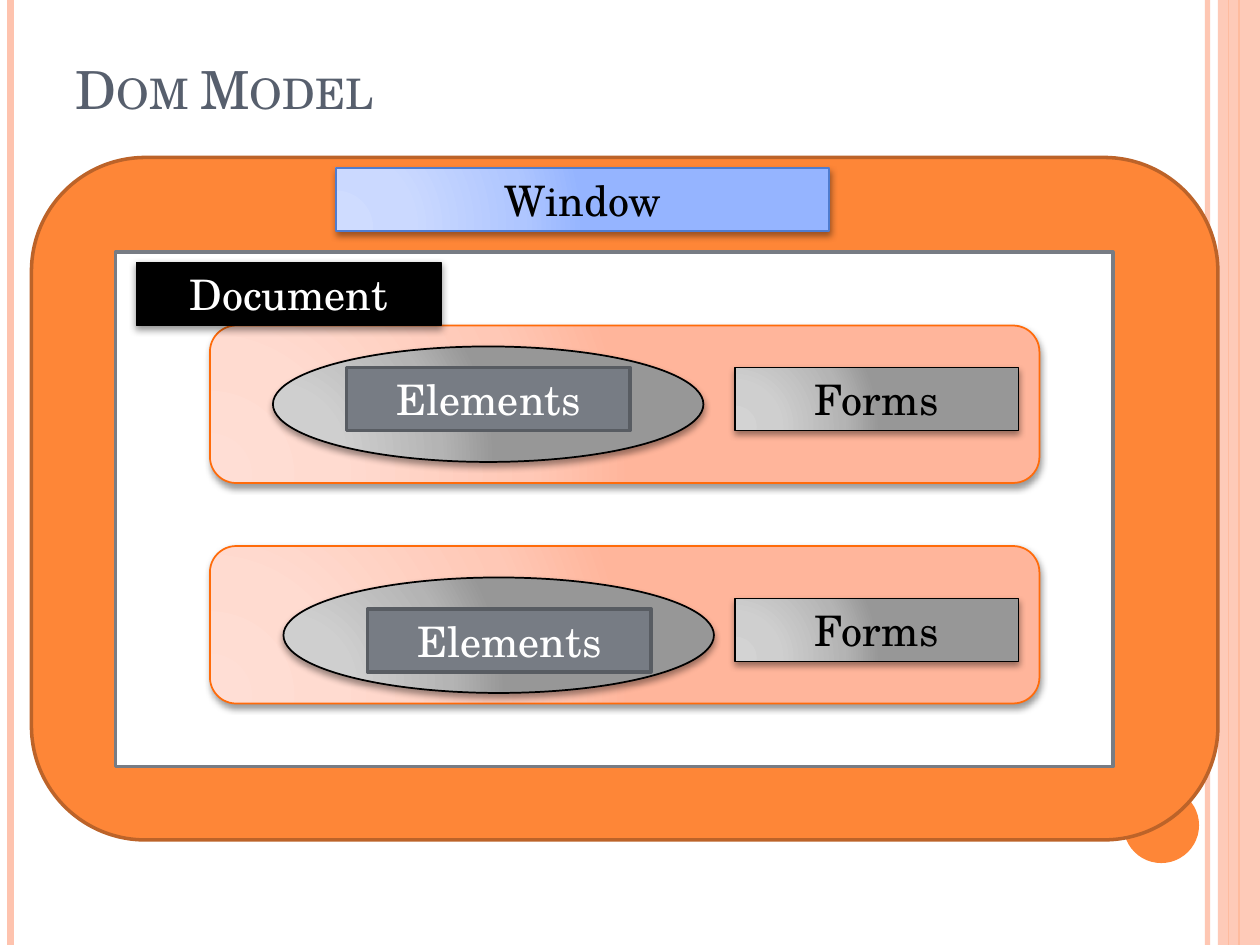
"""Build a slide that shows the DOM model as nested boxes."""
from dataclasses import dataclass
from typing import Optional

from lxml.etree import SubElement as Sub
from pptx import Presentation
from pptx.dml.color import RGBColor
from pptx.enum.shapes import MSO_CONNECTOR as Conn, MSO_SHAPE as Kind
from pptx.enum.text import MSO_ANCHOR as Anchor, MSO_AUTO_SIZE as Fit, PP_ALIGN as Align
from pptx.oxml.ns import qn
from pptx.util import Pt

FONT = "TeX Gyre Schola"
STOPS = (0, 30, 75, 100)
FOCUS = {"l": 5, "t": 100, "r": 120, "b": 10}


@dataclass(frozen=True)
class Style:
    fill: tuple[str, ...]
    line: Optional[str] = None
    width: float = 1
    ink: str = "000000"
    shade: Optional[tuple[float, float]] = None
    alpha: int = 100


@dataclass(frozen=True)
class Box:
    kind: Kind
    left: float
    top: float
    width: float
    height: float
    style: Style
    text: str = ""


@dataclass(frozen=True)
class Rule:
    x: float
    color: str
    width: float
    alpha: int = 100


SOFT = (40, 2)
GRAY = Style(("D3D3D3", "CFCFCF", "B4B4B4", "979797"), "000000", shade=SOFT)
PEACH = Style(("FFDED5", "FFDBD0", "FFC8B6", "FFB59B"), "FF6B0A", shade=SOFT)
BLUE = Style(("CFDCFF", "CBD9FF", "AFC6FF", "95B4FF"), "4F7CCF", shade=SOFT)
BLACK = Style(("000000",), "000000", ink="FFFFFF", shade=(42, 1.6))
SLATE = Style(("777C84",), "585C62", 2, "FFFFFF")
FRAME = Style(("FE8637",), "BC6329", 2)
PAPER = Style(("FFFFFF",), "777C84", 2)
BAND = Style(("FEC3AE",), alpha=87)
DOT = Style(("FE8637",))

RULES = (
    Rule(690, "FEC3AE", 3, 93),
    Rule(6, "FEC3AE", 4.5),
    Rule(708, "FE8637", 1.5),
    Rule(702, "FE8637", 0.75),
)
DECOR = (
    Box(Kind.RECTANGLE, 696, 0, 24, 540, BAND),
    Box(Kind.OVAL, 642, 450, 43.2, 43.2, DOT),
)
MODEL = (
    Box(Kind.ROUNDED_RECTANGLE, 18, 90, 678, 390, FRAME),
    Box(Kind.RECTANGLE, 66, 144, 570, 294, PAPER),
    *(Box(Kind.ROUNDED_RECTANGLE, 120, y, 474, 90, PEACH) for y in (186, 312)),
    *(Box(Kind.OVAL, x, y, 246, 66, GRAY) for x, y in ((156, 198), (162, 330))),
    Box(Kind.RECTANGLE, 192, 96, 282, 36, BLUE, "Window"),
    Box(Kind.RECTANGLE, 78, 150, 174, 36, BLACK, "Document"),
    *(Box(Kind.RECTANGLE, 420, y, 162, 36, GRAY, "Forms") for y in (210, 342)),
    *(Box(Kind.RECTANGLE, x, y, 162, 36, SLATE, "Elements")
      for x, y in ((198, 210), (210, 348))),
)


def rgb(code: str) -> RGBColor:
    """Turn a hex string into a colour."""
    return RGBColor.from_string(code)


def fade(node, alpha: float) -> None:
    """Make the solid colours inside a node partly clear."""
    for color in node.iter(qn("a:srgbClr")):
        Sub(color, qn("a:alpha"), val=str(round(alpha * 1000)))


def blend(props, colors: tuple[str, ...]) -> None:
    """Fill a shape with a radial gradient."""
    grad = Sub(props, qn("a:gradFill"), rotWithShape="1")
    props.find(qn("a:prstGeom")).addnext(grad)
    stops = Sub(grad, qn("a:gsLst"))
    for pos, code in zip(STOPS, colors):
        stop = Sub(stops, qn("a:gs"), pos=str(pos * 1000))
        Sub(stop, qn("a:srgbClr"), val=code)
    way = Sub(grad, qn("a:path"), path="circle")
    Sub(way, qn("a:fillToRect"), {k: str(v * 1000) for k, v in FOCUS.items()})


def cast(props, alpha: float, dist: float) -> None:
    """Drop a soft shadow straight down."""
    glow = Sub(props.find(qn("a:effectLst")), qn("a:outerShdw"),
               blurRad=str(Pt(4)), dist=str(Pt(dist)), dir="5400000", rotWithShape="0")
    Sub(glow, qn("a:srgbClr"), val="000000")
    fade(glow, alpha)


def write(frame, text: str, size: float, color: str, align: Align) -> None:
    """Set one line of text and format its run."""
    frame.text = text
    para = frame.paragraphs[0]
    para.alignment = align
    font = para.runs[0].font
    font.name, font.size = FONT, Pt(size)
    font.color.rgb = rgb(color)


def draw(slide, box: Box) -> None:
    """Draw one box with its style and label."""
    style = box.style
    shape = slide.shapes.add_shape(
        box.kind, Pt(box.left), Pt(box.top), Pt(box.width), Pt(box.height))
    props = shape.element.spPr
    if len(style.fill) > 1:
        blend(props, style.fill)
    else:
        shape.fill.solid()
        shape.fill.fore_color.rgb = rgb(style.fill[0])
        if style.alpha < 100:
            fade(props, style.alpha)
    if style.line:
        shape.line.color.rgb = rgb(style.line)
        shape.line.width = Pt(style.width)
    else:
        shape.line.fill.background()
    shape.shadow.inherit = False
    if style.shade:
        cast(props, *style.shade)
    if box.text:
        frame = shape.text_frame
        frame.word_wrap = True
        frame.auto_size = Fit.SHAPE_TO_FIT_TEXT
        frame.vertical_anchor = Anchor.TOP
        write(frame, box.text, 24, style.ink, Align.CENTER)


def stripe(slide, rule: Rule) -> None:
    """Draw one upright line over the full height."""
    line = slide.shapes.add_connector(
        Conn.STRAIGHT, Pt(rule.x), Pt(0), Pt(rule.x), Pt(540))
    line.line.color.rgb = rgb(rule.color)
    line.line.width = Pt(rule.width)
    props = line.element.spPr
    if rule.alpha < 100:
        fade(props, rule.alpha)
    Sub(props, qn("a:effectLst"))


def head(slide) -> None:
    """Place the title in small capitals."""
    title = slide.shapes.title
    title.left, title.top, title.width, title.height = map(Pt, (36, 21.6, 588, 50.4))
    frame = title.text_frame
    write(frame, "Dom Model", 30, "575F6D", Align.LEFT)
    frame.vertical_anchor = Anchor.BOTTOM
    frame.paragraphs[0].runs[0].font.element.set("cap", "small") if hasattr(
        frame.paragraphs[0].runs[0].font, "element") else next(
        title.element.iter(qn("a:rPr"))).set("cap", "small")


def main() -> None:
    """Build and save the slide."""
    deck = Presentation()
    deck.slide_width, deck.slide_height = Pt(720), Pt(540)
    slide = deck.slides.add_slide(deck.slide_layouts[5])
    for rule in RULES:
        stripe(slide, rule)
    for box in DECOR:
        draw(slide, box)
    head(slide)
    for box in MODEL:
        draw(slide, box)
    deck.save("out.pptx")


if __name__ == "__main__":
    main()
